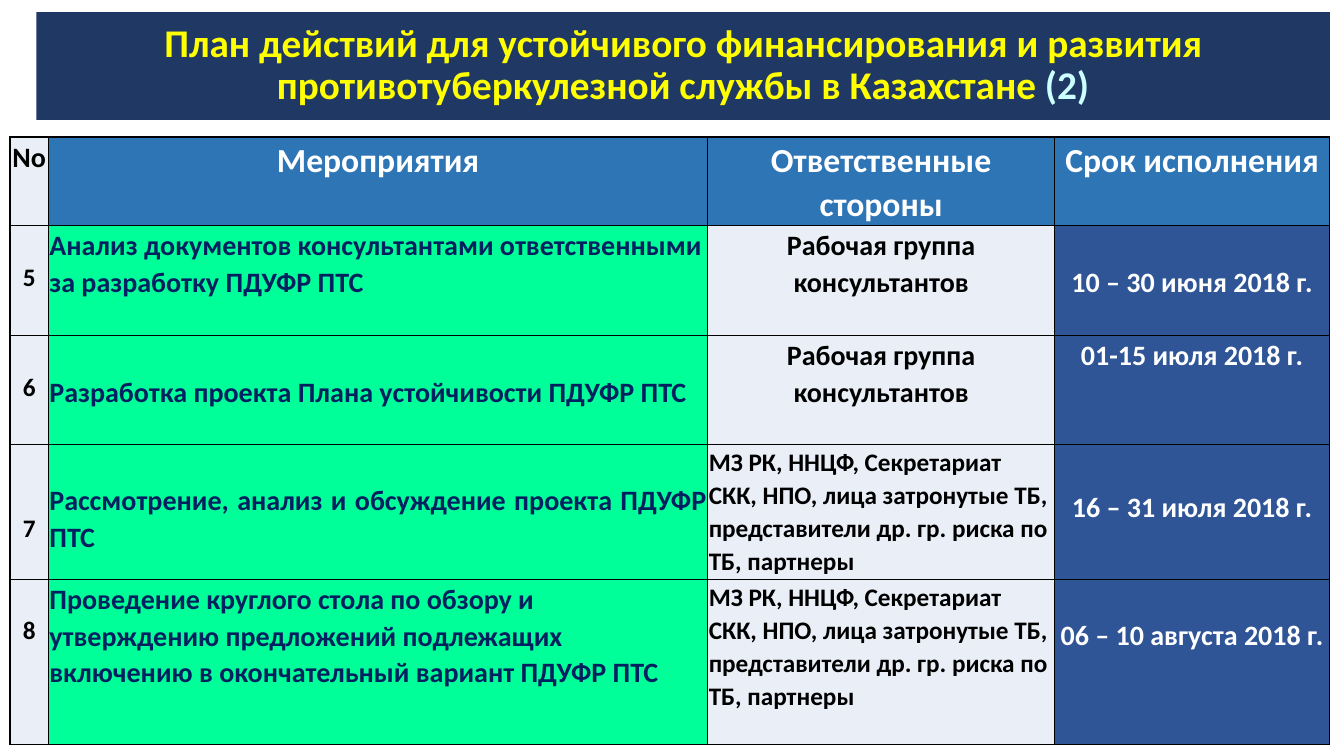
"""Build the action plan slide: a title bar above a table of activities."""
from dataclasses import dataclass

from lxml.etree import SubElement
from pptx import Presentation
from pptx.dml.color import RGBColor as Rgb
from pptx.enum.text import MSO_ANCHOR as Anchor, PP_ALIGN as Align
from pptx.oxml.ns import qn
from pptx.util import Inches, Pt

TITLE = [
    "План действий для устойчивого финансирования и развития противотуберкулезной службы в Казахстане ",
    "(2)",
]
HEADINGS = ["No", "Мероприятия", "Ответственные стороны", "Срок исполнения"]
CONSULTANTS = "Рабочая группа консультантов"
PARTNERS = (
    "МЗ РК, ННЦФ, Секретариат СКК, НПО, лица затронутые ТБ, "
    "представители др. гр. риска по ТБ, партнеры"
)
ACTIVITIES = [
    ("5", "Анализ документов консультантами ответственными за разработку ПДУФР ПТС",
     CONSULTANTS, "10 – 30 июня 2018 г."),
    ("6", "Разработка проекта Плана устойчивости ПДУФР ПТС",
     CONSULTANTS, "01-15 июля 2018 г."),
    ("7", "Рассмотрение, анализ и обсуждение проекта ПДУФР ПТС",
     PARTNERS, "16 – 31 июля 2018 г."),
    ("8", "Проведение круглого стола по обзору и утверждению предложений "
     "подлежащих включению в окончательный вариант ПДУФР ПТС",
     PARTNERS, "06 – 10 августа 2018 г."),
]
TOP_OFFSETS = [
    (0.33, 0, 0, 0.36),
    (0.33, 0.36, 0, 0),
    (0.65, 0.36, 0, 0.43),
    (0.33, 0, 0, 0.36),
]
COLUMN_WIDTHS = [0.38, 6.54, 3.44, 2.73]
ROW_HEIGHTS = [0.88, 1.09, 1.08, 1.34, 1.64]
TABLE_LEFT, TABLE_TOP = 0.1, 1.36


@dataclass(frozen=True)
class Theme:
    """Colours, type sizes and font of the slide."""
    font: str = "Calibri"
    title_fill: str = "203864"
    title_text: str = "FFFF00"
    title_part: str = "CCFFFF"
    heading_fill: str = "2E75B6"
    pale_fill: str = "EAEFF7"
    activity_fill: str = "00FF99"
    activity_text: str = "002060"
    date_fill: str = "2F5597"
    dark: str = "000000"
    light: str = "FFFFFF"
    title_size: int = 28
    heading_size: int = 24
    body_size: int = 20
    small_size: int = 18


THEME = Theme()


def format_run(run, size, color):
    """Set the font of a run."""
    run.font.name = THEME.font
    run.font.size = Pt(size)
    run.font.bold = True
    run.font.color.rgb = Rgb.from_string(color)


def add_borders(cell):
    """Draw a thin dark line on each side of a cell."""
    properties = cell._tc.get_or_add_tcPr()
    for side in ("a:lnL", "a:lnR", "a:lnT", "a:lnB"):
        border = SubElement(properties, qn(side), w=str(Pt(1)))
        fill = SubElement(border, qn("a:solidFill"))
        SubElement(fill, qn("a:srgbClr"), val=THEME.dark)


def cell_style(row, column, text):
    """Return the fill, text colour, size and alignment of a cell."""
    if row == 0 and column > 0:
        return THEME.heading_fill, THEME.light, THEME.heading_size, Align.CENTER
    if column == 0:
        size = THEME.small_size if row else THEME.body_size
        return THEME.pale_fill, THEME.dark, size, Align.CENTER
    if column == 1:
        align = Align.JUSTIFY if row == 3 else Align.LEFT
        return THEME.activity_fill, THEME.activity_text, THEME.body_size, align
    if column == 3:
        return THEME.date_fill, THEME.light, THEME.body_size, Align.CENTER
    if text == PARTNERS:
        return THEME.pale_fill, THEME.dark, THEME.small_size, Align.LEFT
    return THEME.pale_fill, THEME.dark, THEME.body_size, Align.CENTER


def fill_cell(cell, text, offset, style):
    """Write and format one table cell."""
    fill, color, size, align = style
    add_borders(cell)
    cell.fill.solid()
    cell.fill.fore_color.rgb = Rgb.from_string(fill)
    cell.margin_left = cell.margin_right = Inches(0.01)
    cell.margin_top = Inches(0.01 + offset)
    cell.margin_bottom = 0
    cell.vertical_anchor = Anchor.TOP
    cell.text_frame.text = text
    paragraph = cell.text_frame.paragraphs[0]
    paragraph.alignment = align
    paragraph.line_spacing = 1.07
    format_run(paragraph.runs[0], size, color)


def add_title(slide):
    """Place the title bar and its two-coloured text."""
    title = slide.shapes.title
    title.left, title.top = Inches(0.36), Inches(0.12)
    title.width, title.height = Inches(12.83), Inches(1.07)
    title.fill.solid()
    title.fill.fore_color.rgb = Rgb.from_string(THEME.title_fill)
    title.text_frame.word_wrap = True
    title.text_frame.vertical_anchor = Anchor.MIDDLE
    paragraph = title.text_frame.paragraphs[0]
    paragraph.alignment = Align.CENTER
    paragraph.line_spacing = 0.9
    for text, color in zip(TITLE, (THEME.title_text, THEME.title_part)):
        run = paragraph.add_run()
        run.text = text
        format_run(run, THEME.title_size, color)


def add_plan(slide):
    """Place the table of activities."""
    plan = slide.shapes.add_table(
        len(ROW_HEIGHTS), len(COLUMN_WIDTHS), Inches(TABLE_LEFT), Inches(TABLE_TOP),
        Inches(sum(COLUMN_WIDTHS)), Inches(sum(ROW_HEIGHTS)),
    ).table
    plan.horz_banding = False
    for column, width in zip(plan.columns, COLUMN_WIDTHS):
        column.width = Inches(width)
    for row, height in zip(plan.rows, ROW_HEIGHTS):
        row.height = Inches(height)
    offsets = [(0,) * len(HEADINGS), *TOP_OFFSETS]
    for row, texts in enumerate([HEADINGS, *ACTIVITIES]):
        for column, text in enumerate(texts):
            style = cell_style(row, column, text)
            fill_cell(plan.cell(row, column), text, offsets[row][column], style)


def main():
    """Build and save the slide."""
    deck = Presentation()
    deck.slide_width, deck.slide_height = Inches(13.33), Inches(7.5)
    slide = deck.slides.add_slide(deck.slide_layouts[5])
    add_title(slide)
    add_plan(slide)
    deck.save("out.pptx")


if __name__ == "__main__":
    main()
